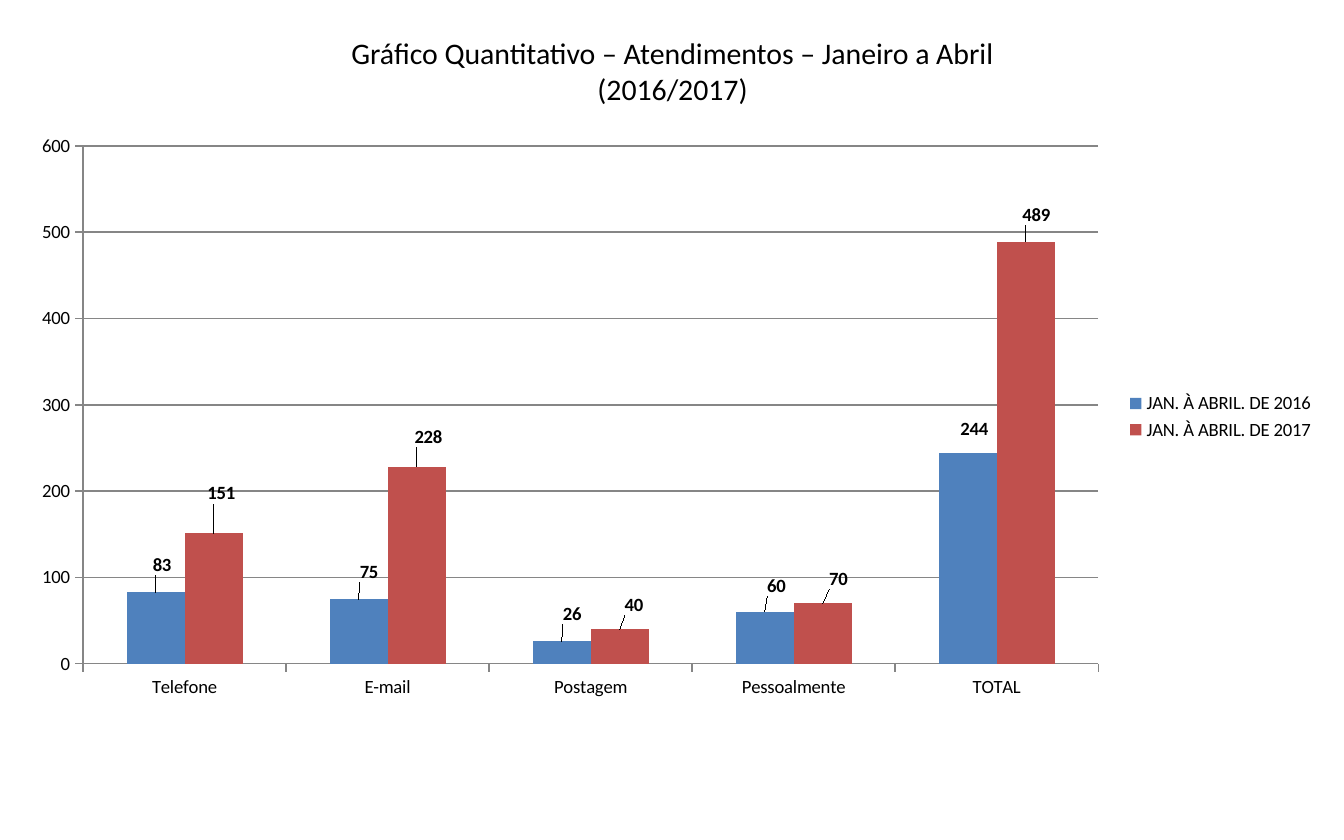
"""Build a slide comparing service contacts by channel in early 2016 and 2017."""
from dataclasses import dataclass

import lxml.etree
import pptx
import pptx.chart.axis
import pptx.chart.chart
import pptx.chart.data
import pptx.chart.point
import pptx.chart.series
import pptx.dml.color
import pptx.enum.chart
import pptx.enum.text
import pptx.oxml.ns
import pptx.slide
import pptx.text.text
import pptx.util

SLIDE_WIDTH = pptx.util.Inches(10)
SLIDE_HEIGHT = pptx.util.Inches(6.25)
FONT_NAME = "Calibri"
COLORS = {"text": "000000", "axis": "868686", "year_2016": "4F81BD", "year_2017": "C0504D"}
CHANNELS = ["Telefone", "E-mail", "Postagem", "Pessoalmente", "TOTAL"]


@dataclass(frozen=True)
class Area:
    """A rectangle in percent of its container's size."""

    left: float
    top: float
    width: float
    height: float

    def on_slide(self) -> tuple[int, int, int, int]:
        """Return the rectangle in slide units."""
        return (
            int(SLIDE_WIDTH * self.left / 100),
            int(SLIDE_HEIGHT * self.top / 100),
            int(SLIDE_WIDTH * self.width / 100),
            int(SLIDE_HEIGHT * self.height / 100),
        )


@dataclass(frozen=True)
class Period:
    """One series, with label shifts in percent of the chart's size."""

    name: str
    color: str
    counts: list[int]
    label_shifts: list[tuple[float, float]]


TITLE_AREA = Area(20.6, 3.36, 58.9, 10.24)
CHART_AREA = Area(1.2, 14.72, 97.6, 69.76)
PLOT_AREA = Area(5.1, 3.8, 77.4, 88.4)
PERIODS = [
    Period("JAN. À ABRIL. DE 2016", "year_2016", [83, 75, 26, 60, 244],
           [(0.5, -1.9), (0.8, -1.9), (0.8, -1.9), (0.9, -1.7), (0.5, -1.4)]),
    Period("JAN. À ABRIL. DE 2017", "year_2017", [151, 228, 40, 70, 489],
           [(0.6, -4.1), (0.9, -2.4), (1.1, -1.5), (1.2, -1.5), (0.8, -1.9)]),
]


def rgb(color: str) -> pptx.dml.color.RGBColor:
    """Look up a named colour."""
    return pptx.dml.color.RGBColor.from_string(COLORS[color])


def style_font(font: pptx.text.text.Font, size: float, bold: bool = False) -> None:
    """Apply the slide's typeface and text colour."""
    font.name = FONT_NAME
    font.size = pptx.util.Pt(size)
    font.bold = bold
    font.color.rgb = rgb("text")


def make_layout(settings: dict[str, str | float]) -> lxml.etree.ElementBase:
    """Build a manual chart layout; numbers are percentages."""
    layout = pptx.oxml.parse_xml(
        f"<c:layout {pptx.oxml.ns.nsdecls('c')}><c:manualLayout/></c:layout>"
    )
    for tag, value in settings.items():
        child = lxml.etree.SubElement(layout[0], pptx.oxml.ns.qn(f"c:{tag}"))
        child.set("val", value if isinstance(value, str) else f"{value / 100:.4f}")
    return layout


def add_title(slide: pptx.slide.Slide, text: str) -> None:
    """Place the centred slide title."""
    title = slide.shapes.title
    title.left, title.top, title.width, title.height = TITLE_AREA.on_slide()
    frame = title.text_frame
    frame.word_wrap = True
    frame.auto_size = pptx.enum.text.MSO_AUTO_SIZE.NONE
    frame.vertical_anchor = pptx.enum.text.MSO_ANCHOR.TOP
    paragraph = frame.paragraphs[0]
    paragraph.alignment = pptx.enum.text.PP_ALIGN.CENTER
    run = paragraph.add_run()
    run.text = text
    style_font(run.font, 16)


def style_axis(axis: pptx.chart.axis._BaseAxis) -> None:
    """Draw an axis with a grey line and outside ticks."""
    axis.major_tick_mark = pptx.enum.chart.XL_TICK_MARK.OUTSIDE
    axis.minor_tick_mark = pptx.enum.chart.XL_TICK_MARK.NONE
    axis.format.line.color.rgb = rgb("axis")
    axis.format.line.width = pptx.util.Pt(0.75)
    style_font(axis.tick_labels.font, 10)


def place_label(point: pptx.chart.point.Point, shift: tuple[float, float]) -> None:
    """Show a bold value above its column, moved by the given shift."""
    label = point.data_label
    style_font(label.font, 10, bold=True)
    label.position = pptx.enum.chart.XL_LABEL_POSITION.OUTSIDE_END
    element = label.font._element.getparent()
    while element.tag != pptx.oxml.ns.qn("c:dLbl"):
        element = element.getparent()
    element.insert(1, make_layout(dict(zip("xy", shift))))


def style_series(series: pptx.chart.series.BarSeries, period: Period) -> None:
    """Colour a series and label its columns."""
    series.format.fill.solid()
    series.format.fill.fore_color.rgb = rgb(period.color)
    series.invert_if_negative = False
    for index, shift in enumerate(period.label_shifts):
        place_label(series.points[index], shift)


def place_plot(chart: pptx.chart.chart.Chart) -> None:
    """Fix the inner plot rectangle within the chart."""
    plot_area = chart._chartSpace.chart.plotArea
    for layout in plot_area.findall(pptx.oxml.ns.qn("c:layout")):
        plot_area.remove(layout)
    plot_area.insert(0, make_layout({
        "layoutTarget": "inner", "xMode": "edge", "yMode": "edge",
        "x": PLOT_AREA.left, "y": PLOT_AREA.top,
        "w": PLOT_AREA.width, "h": PLOT_AREA.height,
    }))


def add_contacts_chart(slide: pptx.slide.Slide) -> None:
    """Add the clustered columns for both periods."""
    data = pptx.chart.data.CategoryChartData()
    data.categories = CHANNELS
    for period in PERIODS:
        data.add_series(period.name, period.counts)
    chart = slide.shapes.add_chart(
        pptx.enum.chart.XL_CHART_TYPE.COLUMN_CLUSTERED, *CHART_AREA.on_slide(), data
    ).chart
    style_font(chart.font, 10)
    chart.has_title = False
    chart.has_legend = True
    chart.legend.position = pptx.enum.chart.XL_LEGEND_POSITION.RIGHT
    chart.legend.include_in_layout = False
    style_font(chart.legend.font, 10)
    style_axis(chart.category_axis)
    style_axis(chart.value_axis)
    chart.value_axis.minimum_scale = 0
    chart.value_axis.maximum_scale = 600
    chart.value_axis.major_unit = 100
    chart.value_axis.has_major_gridlines = True
    gridline = chart.value_axis.major_gridlines.format.line
    gridline.color.rgb = rgb("axis")
    gridline.width = pptx.util.Pt(0.75)
    plot = chart.plots[0]
    plot.vary_by_categories = False
    plot.gap_width = 150
    plot.overlap = 0
    for series, period in zip(plot.series, PERIODS):
        style_series(series, period)
    place_plot(chart)


def main() -> None:
    """Build and save the presentation."""
    presentation = pptx.Presentation()
    presentation.slide_width = SLIDE_WIDTH
    presentation.slide_height = SLIDE_HEIGHT
    slide = presentation.slides.add_slide(presentation.slide_layouts.get_by_name("Title Only"))
    add_contacts_chart(slide)
    add_title(slide, "Gráfico Quantitativo – Atendimentos – Janeiro a Abril (2016/2017)")
    presentation.save("out.pptx")


if __name__ == "__main__":
    main()
